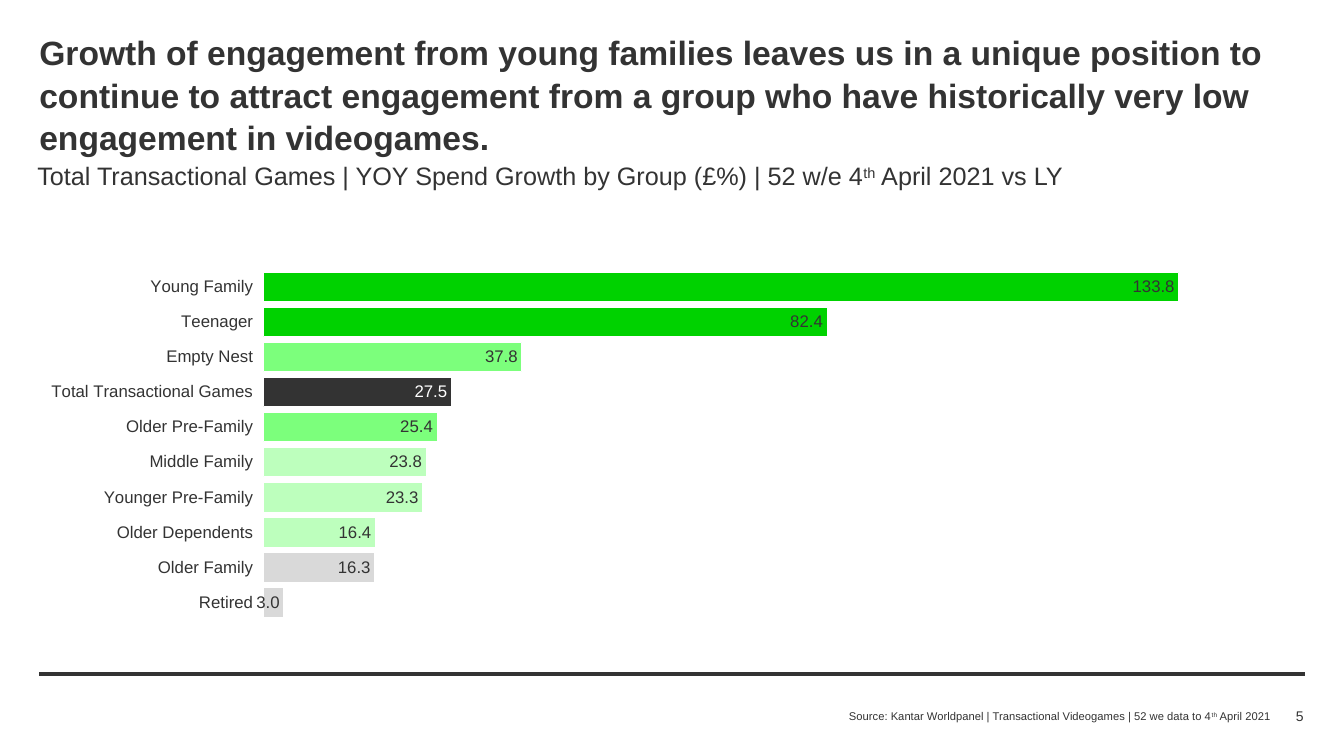
from lxml.etree import SubElement
from pptx import Presentation
from pptx.chart.data import CategoryChartData
from pptx.dml.color import RGBColor
from pptx.enum.chart import XL_CHART_TYPE, XL_LABEL_POSITION, XL_TICK_LABEL_POSITION, XL_TICK_MARK
from pptx.enum.shapes import MSO_CONNECTOR
from pptx.enum.text import MSO_ANCHOR, PP_ALIGN
from pptx.oxml import parse_xml
from pptx.oxml.ns import nsdecls, qn
from pptx.util import Inches, Pt

DARK = RGBColor(0x33, 0x33, 0x33)
WHITE = RGBColor(0xFF, 0xFF, 0xFF)
GREEN = RGBColor(0x00, 0xD2, 0x00)
LIGHT = RGBColor(0x7C, 0xFF, 0x7C)
PALE = RGBColor(0xBD, 0xFF, 0xBD)
GREY = RGBColor(0xD9, 0xD9, 0xD9)
FONT = "Arial"

GROUPS = [
    ("Young Family", 133.8, GREEN),
    ("Teenager", 82.4, GREEN),
    ("Empty Nest", 37.8, LIGHT),
    ("Total Transactional Games", 27.5, DARK),
    ("Older Pre-Family", 25.4, LIGHT),
    ("Middle Family", 23.8, PALE),
    ("Younger Pre-Family", 23.3, PALE),
    ("Older Dependents", 16.4, PALE),
    ("Older Family", 16.3, GREY),
    ("Retired", 3.0, GREY),
]


def style(font, size, color=DARK, bold=False):
    font.name = FONT
    font.size = Pt(size)
    font.bold = bold
    font.color.rgb = color


def add_text(slide, box, parts, size, bold=False, align=PP_ALIGN.LEFT,
             anchor=MSO_ANCHOR.TOP, space=1.0):
    frame = slide.shapes.add_textbox(*map(Inches, box)).text_frame
    frame.word_wrap = True
    frame.vertical_anchor = anchor
    frame.margin_left = frame.margin_right = 0
    frame.margin_top = frame.margin_bottom = 0
    para = frame.paragraphs[0]
    para.alignment = align
    para.line_spacing = space
    for part in parts:
        run = para.add_run()
        run.text = part
        style(run.font, size, bold=bold)
        if part == "th":
            run.font._element.set("baseline", "30000")


def add_rule(slide):
    rule = slide.shapes.add_connector(
        MSO_CONNECTOR.STRAIGHT, Inches(0.39), Inches(6.69), Inches(12.94), Inches(6.69))
    rule.line.color.rgb = DARK
    rule.line.width = Pt(3)
    SubElement(rule._element.spPr, qn("a:effectLst"))


def set_plot(chart, x, y, w, h):
    area = chart._chartSpace.chart.plotArea
    for old in area.findall(qn("c:layout")):
        area.remove(old)
    area.insert(0, parse_xml(
        f'<c:layout {nsdecls("c")}><c:manualLayout><c:layoutTarget val="inner"/>'
        '<c:xMode val="edge"/><c:yMode val="edge"/>'
        f'<c:x val="{x}"/><c:y val="{y}"/><c:w val="{w}"/><c:h val="{h}"/>'
        '</c:manualLayout></c:layout>'))


def set_axes(chart):
    groups = chart.category_axis
    groups.reverse_order = True
    groups.major_tick_mark = XL_TICK_MARK.NONE
    groups.tick_label_position = XL_TICK_LABEL_POSITION.LOW
    groups.format.line.fill.background()
    growth = chart.value_axis
    growth.minimum_scale = 0
    growth.maximum_scale = 160
    growth.has_major_gridlines = False
    growth.visible = False


def add_bars(slide):
    data = CategoryChartData(number_format="0.0")
    data.categories = [name for name, _, _ in GROUPS]
    data.add_series("Series 1", [value for _, value, _ in GROUPS])
    chart = slide.shapes.add_chart(
        XL_CHART_TYPE.BAR_CLUSTERED, Inches(0.32), Inches(2.35),
        Inches(13.39), Inches(3.94), data).chart
    chart.has_legend = False
    chart.has_title = False
    style(chart.font, 12)
    set_axes(chart)
    set_plot(chart, 0.171, 0.082, 0.811, 0.883)

    plot = chart.plots[0]
    plot.gap_width = 20
    plot.vary_by_categories = False
    series = plot.series[0]
    labels = series.data_labels
    labels.show_value = True
    labels.number_format = "0.0"
    labels.number_format_is_linked = False
    labels.position = XL_LABEL_POSITION.INSIDE_END
    style(labels.font, 12)
    for index, (_, _, color) in enumerate(GROUPS):
        point = series.points[index]
        point.format.fill.solid()
        point.format.fill.fore_color.rgb = color
        point.format.line.color.rgb = WHITE
        point.format.line.width = Pt(0.5)
        if color == DARK:
            style(point.data_label.font, 12, WHITE)
            point.data_label.position = XL_LABEL_POSITION.INSIDE_END


def main():
    deck = Presentation()
    deck.slide_width = Inches(13.33)
    deck.slide_height = Inches(7.5)
    slide = deck.slides.add_slide(deck.slide_layouts[6])
    add_rule(slide)
    add_text(slide, (0.39, 0.3, 12.54, 0.44), [
        "Growth of engagement from young families leaves us in a unique position to "
        "continue to attract engagement from a group who have historically very low "
        "engagement in videogames."], 24, bold=True, space=1.05)
    add_bars(slide)
    add_text(slide, (11.87, 6.99, 1.06, 0.22), ["5"], 10,
             align=PP_ALIGN.RIGHT, anchor=MSO_ANCHOR.MIDDLE)
    add_text(slide, (0.37, 1.58, 12.54, 0.6), [
        "Total Transactional Games | YOY Spend Growth by Group (£%) | 52 w/e 4",
        "th", " April 2021 vs LY"], 18, space=1.05)
    add_text(slide, (7.73, 7.04, 4.87, 0.13), [
        "Source: Kantar Worldpanel | Transactional Videogames | 52 we data to 4",
        "th", " April 2021"], 8, align=PP_ALIGN.RIGHT)
    deck.save("out.pptx")


if __name__ == "__main__":
    main()
